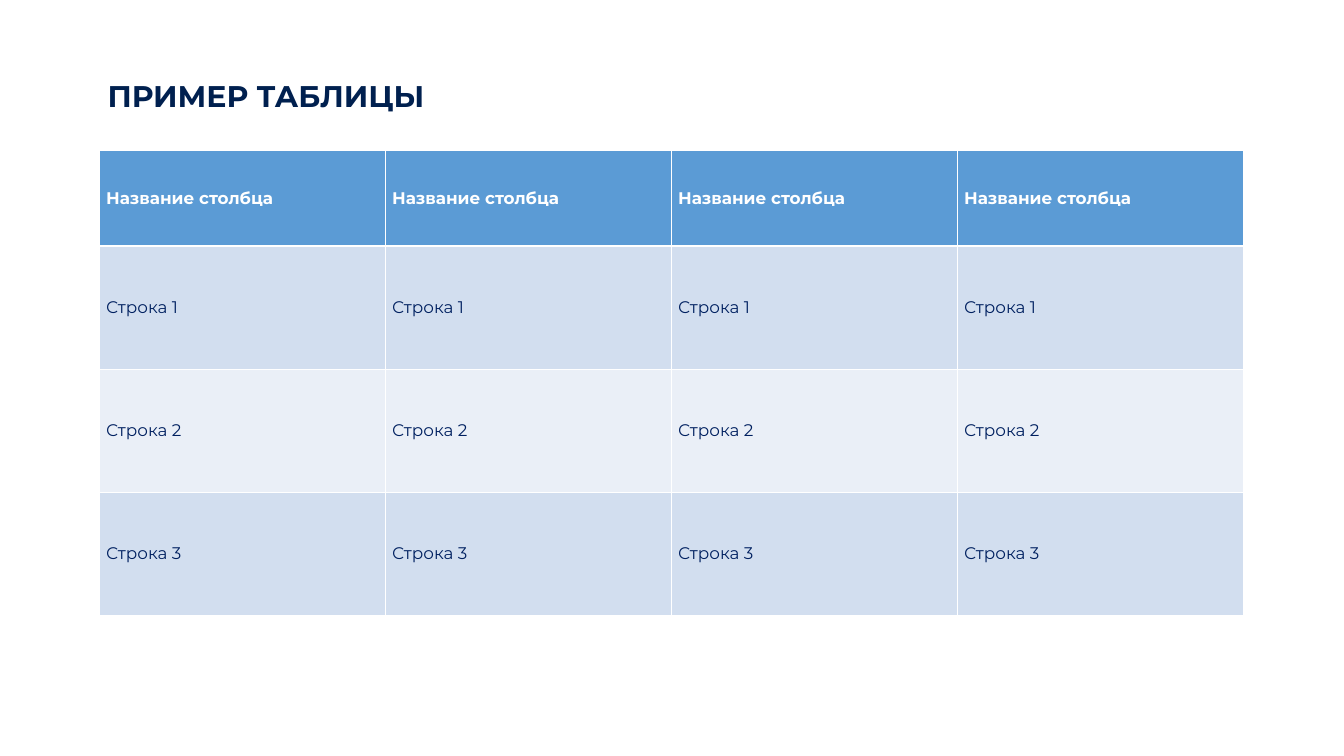
"""Build a slide with a title and a sample table."""
from dataclasses import dataclass

from lxml.etree import SubElement
from pptx import Presentation
from pptx.dml.color import RGBColor
from pptx.enum.text import MSO_ANCHOR as Anchor, MSO_AUTO_SIZE as AutoSize, PP_ALIGN as Align
from pptx.oxml.ns import qn
from pptx.slide import Slide
from pptx.table import _Cell as Cell
from pptx.text.text import _Paragraph as Paragraph
from pptx.util import Cm, Pt

FONT = "Montserrat"
WHITE = RGBColor(0xFF, 0xFF, 0xFF)
TITLE_NAVY = RGBColor(0x00, 0x20, 0x4F)
TEXT_NAVY = RGBColor(0x00, 0x20, 0x60)
HEADER_BLUE = RGBColor(0x5B, 0x9B, 0xD5)
BAND_DARK = RGBColor(0xD2, 0xDE, 0xEF)
BAND_LIGHT = RGBColor(0xEA, 0xEF, 0xF7)

COLUMN_COUNT = 4
COLUMN_WIDTH = Cm(10.81)
THIN, THICK = Pt(1), Pt(3)


@dataclass(frozen=True)
class TableRow:
    text: str
    height: Cm
    fill: RGBColor
    color: RGBColor = TEXT_NAVY
    bold: bool = False
    top: Pt = THIN
    bottom: Pt = THIN


ROWS = [
    TableRow("Название столбца", Cm(3.61), HEADER_BLUE, WHITE, bold=True, bottom=THICK),
    TableRow("Строка 1", Cm(4.65), BAND_DARK, top=THICK),
    TableRow("Строка 2", Cm(4.65), BAND_LIGHT),
    TableRow("Строка 3", Cm(4.65), BAND_DARK),
]


def add_run(paragraph: Paragraph, text: str, size: int, color: RGBColor, bold: bool) -> None:
    run = paragraph.add_run()
    run.text = text
    run.font.name = FONT
    run.font.size = Pt(size)
    run.font.bold = bold
    run.font.color.rgb = color


def add_border(cell: Cell, side: str, width: Pt) -> None:
    properties = cell._tc.get_or_add_tcPr()
    line = SubElement(properties, qn(f"a:ln{side}"), w=str(int(width)))
    fill = SubElement(line, qn("a:solidFill"))
    SubElement(fill, qn("a:srgbClr"), val=str(WHITE))


def format_cell(cell: Cell, row: TableRow) -> None:
    for side, width in (("L", THIN), ("R", THIN), ("T", row.top), ("B", row.bottom)):
        add_border(cell, side, width)
    cell.fill.solid()
    cell.fill.fore_color.rgb = row.fill
    cell.vertical_anchor = Anchor.MIDDLE
    add_run(cell.text_frame.paragraphs[0], row.text, 18, row.color, row.bold)


def add_title(slide: Slide, text: str) -> None:
    title = slide.shapes.title
    title.left, title.top, title.width, title.height = Cm(3.81), Cm(2.29), Cm(43.89), Cm(2.79)
    frame = title.text_frame
    frame.auto_size = AutoSize.NONE
    frame.word_wrap = True
    frame.vertical_anchor = Anchor.MIDDLE
    paragraph = frame.paragraphs[0]
    paragraph.alignment = Align.LEFT
    paragraph.line_spacing = 0.9
    add_run(paragraph, text, 32, TITLE_NAVY, True)


def add_sample_table(slide: Slide, rows: list[TableRow]) -> None:
    height = sum(row.height for row in rows)
    table = slide.shapes.add_table(
        len(rows), COLUMN_COUNT, Cm(3.76), Cm(5.69), COLUMN_WIDTH * COLUMN_COUNT, height
    ).table
    for column in table.columns:
        column.width = COLUMN_WIDTH
    for table_row, row in zip(table.rows, rows):
        table_row.height = row.height
        for cell in table_row.cells:
            format_cell(cell, row)


def main() -> None:
    presentation = Presentation()
    presentation.slide_width, presentation.slide_height = Cm(50.8), Cm(28.58)
    slide = presentation.slides.add_slide(presentation.slide_layouts[5])
    add_title(slide, "ПРИМЕР ТАБЛИЦЫ")
    add_sample_table(slide, ROWS)
    presentation.save("out.pptx")


if __name__ == "__main__":
    main()
